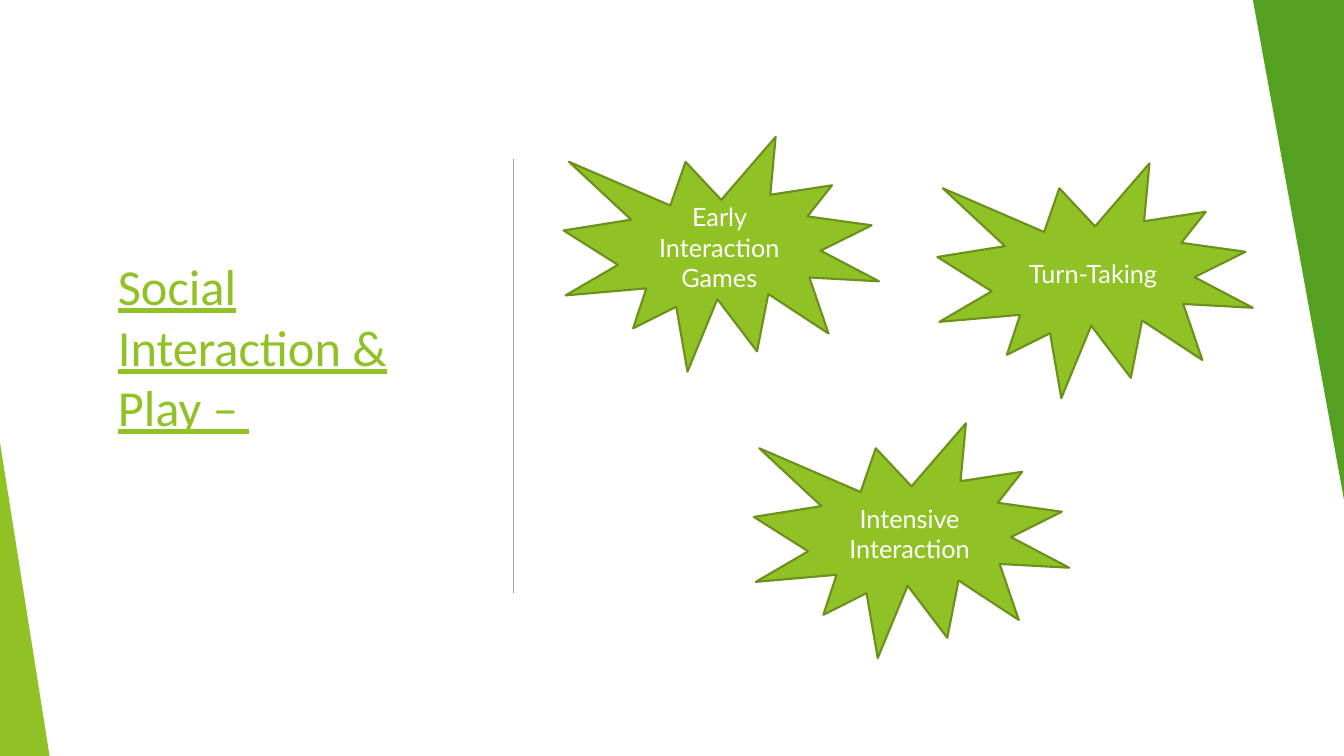
from lxml.etree import SubElement
from pptx import Presentation
from pptx.dml.color import RGBColor
from pptx.enum.shapes import MSO_CONNECTOR, MSO_SHAPE
from pptx.enum.text import MSO_ANCHOR, PP_ALIGN
from pptx.oxml.ns import qn
from pptx.util import Inches, Pt

COLS, ROWS = 32, 18
LIME, GREEN, OLIVE = "90C226", "54A021", "6B901C"
WHITE, GREY = "FFFFFF", "A0A0A0"


def paint(color, code):
    color.rgb = RGBColor.from_string(code)


class Deck:
    """Holds the style and the current slide; lengths are grid columns and rows."""

    def __init__(self):
        self.show = Presentation()
        self.show.slide_width = Inches(13.33)
        self.show.slide_height = Inches(7.5)
        self.col = self.show.slide_width / COLS
        self.row = self.show.slide_height / ROWS
        self.slide = self.show.slides.add_slide(self.show.slide_layouts[6])
        self.slide.background.fill.solid()
        paint(self.slide.background.fill.fore_color, WHITE)

    def place(self, x, y, w, h):
        return (round(x * self.col), round(y * self.row),
                round(w * self.col), round(h * self.row))

    def label(self, shape, words, font, size, code, align, under=False):
        frame = shape.text_frame
        frame.word_wrap = True
        frame.vertical_anchor = MSO_ANCHOR.MIDDLE
        line = frame.paragraphs[0]
        line.alignment = align
        run = line.add_run()
        run.text = words
        run.font.name = font
        run.font.size = Pt(size)
        run.font.underline = under
        paint(run.font.color, code)

    def shape(self, kind, box, fill, edge=None):
        item = self.slide.shapes.add_shape(kind, *self.place(*box))
        item.shadow.inherit = False
        item.fill.solid()
        paint(item.fill.fore_color, fill)
        if edge:
            paint(item.line.color, edge)
            item.line.width = Pt(1.5)
        else:
            item.line.fill.background()
        return item

    def wedge(self, box, fill, turn=0):
        """Draw a triangle whose tip stands over its left corner."""
        item = self.shape(MSO_SHAPE.ISOSCELES_TRIANGLE, box, fill)
        item.adjustments[0] = 0
        item.rotation = turn

    def burst(self, x, y, words):
        item = self.shape(MSO_SHAPE.EXPLOSION1, (x, y, 7.51, 5.59), LIME, OLIVE)
        self.label(item, words, "Lato", 18, WHITE, PP_ALIGN.CENTER)

    def title(self, box, words):
        item = self.slide.shapes.add_textbox(*self.place(*box))
        self.label(item, words, "Calibri", 36, LIME, PP_ALIGN.LEFT, True)

    def rule(self, x, top, end):
        """Draw an upright line."""
        left, start, _, stop = self.place(x, top, 0, end)
        item = self.slide.shapes.add_connector(
            MSO_CONNECTOR.STRAIGHT, left, start, left, stop)
        paint(item.line.color, GREY)
        item.line.width = Pt(0.75)
        SubElement(item._element.spPr, qn("a:effectLst"))


def main():
    deck = Deck()
    deck.title((2.57, 3.1, 8.83, 10.27), "Social Interaction & Play – ")
    deck.wedge((0, 10.54, 1.18, 7.46), LIME)
    deck.rule(12.22, 3.79, 14.11)
    deck.wedge((29.83, 0, 2.21, 12.12), GREEN, 180)
    for x, y, words in (
        (13.42, 3.26, "Early Interaction Games"),
        (22.32, 3.89, "Turn-Taking"),
        (17.95, 10.08, "Intensive Interaction"),
    ):
        deck.burst(x, y, words)
    deck.show.save("out.pptx")


if __name__ == "__main__":
    main()
